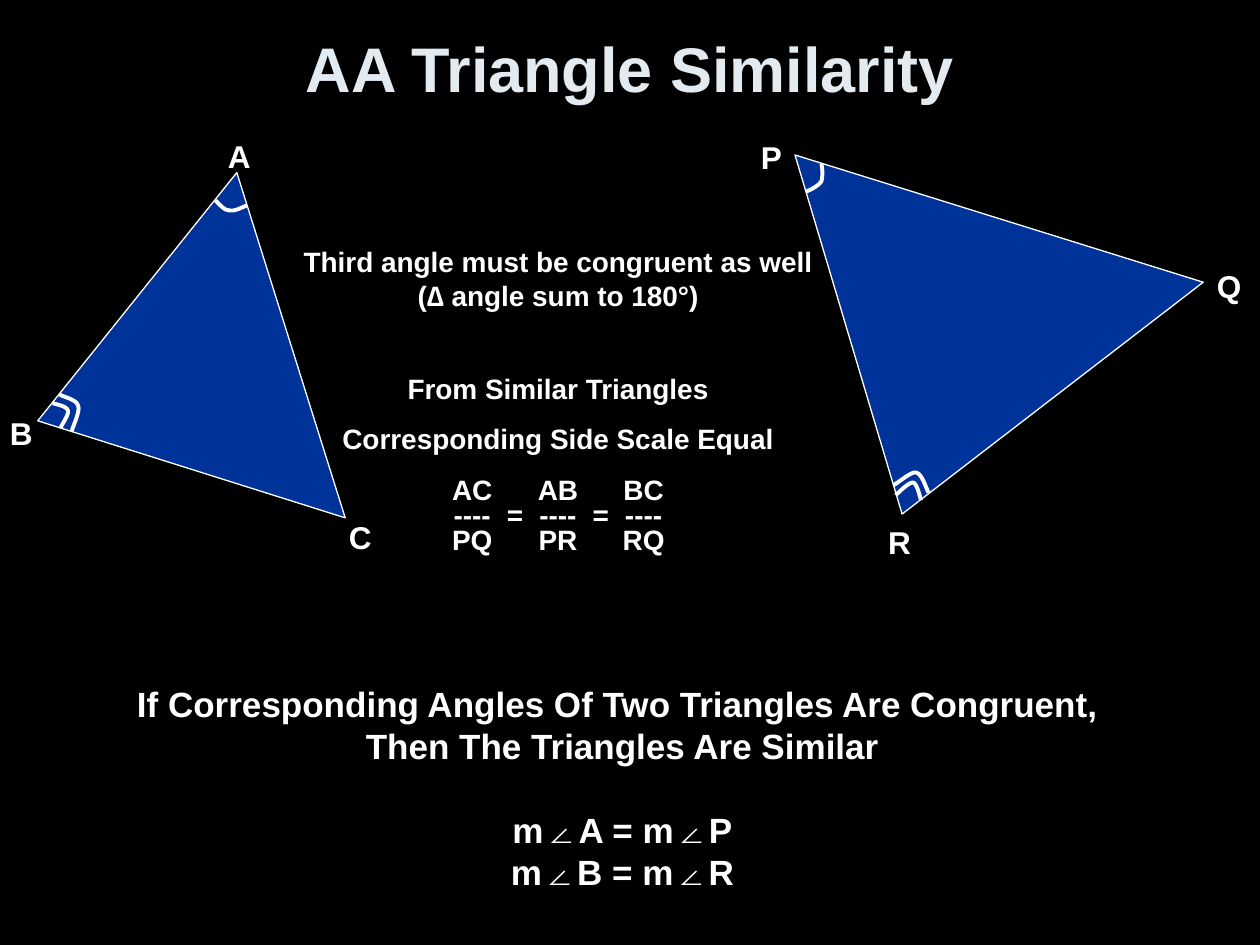
from lxml.etree import SubElement
from pptx import Presentation
from pptx.dml.color import RGBColor as Color
from pptx.enum.text import MSO_ANCHOR as Anchor, PP_ALIGN as Align
from pptx.oxml.ns import qn
from pptx.util import Inches, Pt

COLORS = {"back": "000000", "title": "E3EBF1", "text": "FFFFFF", "triangle": "003399"}
FONT = "Arial"
WIDTH, HEIGHT = 10, 7.5

# Content: each paragraph is (text, line height, space before), in points
TITLE = [("AA Triangle Similarity", None, 0)]
RULE = [
    ("If Corresponding Angles Of Two Triangles Are Congruent, \vThen The Triangles Are Similar", 24, 0),
    ("m∠A = m∠P", 24, 24),
    ("m∠B = m∠R", 24, 0),
]
REASONS = [
    ("Third angle must be congruent as well\v(∆ angle sum to 180°)", 19.4, 0),
    ("From Similar Triangles", 14.4, 38.7),
    ("Corresponding Side Scale Equal", 14.4, 14.4),
]
RATIOS = [
    (["AC", "", "AB", "", "BC"], 14.4),
    (["----", "=", "----", "=", "----"], 0),
    (["PQ", "", "PR", "", "RQ"], 0),
]
TAB_GAP = 0.34

# Corners, label places and angle marks (Bezier points) in inches
TRIANGLES = [
    {
        "corners": [(0.3, 3.34), (1.88, 1.37), (2.74, 4.11)],
        "labels": {"A": (1.71, 1.04), "B": (-0.02, 3.24), "C": (2.67, 4.06)},
        "marks": [
            [(1.71, 1.59), (1.75, 1.63), (1.78, 1.67), (1.82, 1.67), (1.86, 1.68), (1.91, 1.65), (1.96, 1.63)],
            [(0.42, 3.2), (0.44, 3.21), (0.53, 3.22), (0.54, 3.26), (0.55, 3.29), (0.49, 3.37), (0.48, 3.4)],
            [(0.47, 3.13), (0.5, 3.15), (0.61, 3.17), (0.62, 3.22), (0.64, 3.26), (0.58, 3.38), (0.57, 3.42)],
        ],
    },
    {
        "corners": [(7.16, 4.08), (6.31, 1.23), (9.55, 2.24)],
        "labels": {"P": (5.94, 1.05), "Q": (9.56, 2.07), "R": (6.95, 4.1)},
        "marks": [
            [(6.4, 1.52), (6.45, 1.5), (6.5, 1.47), (6.52, 1.44), (6.53, 1.4), (6.53, 1.35), (6.52, 1.3)],
            [(7.11, 3.93), (7.13, 3.91), (7.22, 3.82), (7.25, 3.83), (7.28, 3.84), (7.3, 3.94), (7.31, 3.97)],
            [(7.09, 3.85), (7.12, 3.84), (7.23, 3.74), (7.27, 3.75), (7.32, 3.76), (7.35, 3.88), (7.37, 3.91)],
        ],
    },
]


def add_text(shapes, paragraphs, place, size, color="text", align=Align.CENTER,
             anchor=Anchor.TOP, wrap=False):
    box = shapes.add_textbox(*(Inches(value) for value in place))
    frame = box.text_frame
    frame.word_wrap = wrap
    frame.vertical_anchor = anchor
    for index, (text, line_height, before) in enumerate(paragraphs):
        para = frame.add_paragraph() if index else frame.paragraphs[0]
        para.text = text
        para.alignment = align
        para.space_before = Pt(before)
        if line_height:
            para.line_spacing = Pt(line_height)
        for span in para.runs:
            span.font.name = FONT
            span.font.size = Pt(size)
            span.font.bold = True
            span.font.color.rgb = Color.from_string(COLORS[color])
    return box


def add_outline(shapes, points, weight, fill=None):
    start, *rest = [(Inches(x), Inches(y)) for x, y in points]
    builder = shapes.build_freeform(*start, scale=1.0)
    builder.add_line_segments(rest, close=fill is not None)
    shape = builder.convert_to_shape()
    shape.shadow.inherit = False
    shape.line.color.rgb = Color.from_string(COLORS["text"])
    shape.line.width = Pt(weight)
    if fill:
        shape.fill.solid()
        shape.fill.fore_color.rgb = Color.from_string(COLORS[fill])
    else:
        shape.fill.background()
    return shape


def bend(shape):
    """Turn every three straight segments into one cubic curve."""
    path = next(shape._element.iter(qn("a:path")))
    lines = path.findall(qn("a:lnTo"))
    for first in range(0, len(lines), 3):
        curve = SubElement(path, qn("a:cubicBezTo"))
        for line in lines[first:first + 3]:
            curve.append(line[0])
            path.remove(line)


def set_centre_tabs(para, positions):
    tabs = SubElement(para._p.get_or_add_pPr(), qn("a:tabLst"))
    for position in positions:
        SubElement(tabs, qn("a:tab"), pos=str(Inches(position)), algn="ctr")


deck = Presentation()
deck.slide_width, deck.slide_height = Inches(WIDTH), Inches(HEIGHT)
page = deck.slides.add_slide(deck.slide_layouts[6])
page.background.fill.solid()
page.background.fill.fore_color.rgb = Color.from_string(COLORS["back"])

# Title and conclusion
add_text(page.shapes, TITLE, (0.5, 0.05, 9, 0.97), 36, color="title", anchor=Anchor.MIDDLE, wrap=True)
add_text(page.shapes, RULE, (0.97, 5.37, 7.94, 1.77), 20)

# Reasons, then the ratios set on centred tabs
left, width, inset = 2.18, 4.5, 0.1
ratio_lines = [("\t" + "\t".join(cells), 14.4, before) for cells, before in RATIOS]
reasons = add_text(page.shapes, REASONS + ratio_lines, (left, 1.89, width, 2.79), 16, wrap=True)
middle = width / 2 - inset
for para in reasons.text_frame.paragraphs[len(REASONS):]:
    para.alignment = Align.LEFT
    set_centre_tabs(para, [middle + step * TAB_GAP for step in range(-2, 3)])

# Triangles with corner labels and angle marks
for triangle in TRIANGLES:
    group = page.shapes.add_group_shape()
    add_outline(group.shapes, triangle["corners"], 0.75, fill="triangle")
    for letter, (x, y) in triangle["labels"].items():
        add_text(group.shapes, [(letter, None, 0)], (x, y, 0.38, 0.4), 18, align=Align.LEFT)
    for mark in triangle["marks"]:
        bend(add_outline(group.shapes, mark, 2.25))

deck.save("out.pptx")
